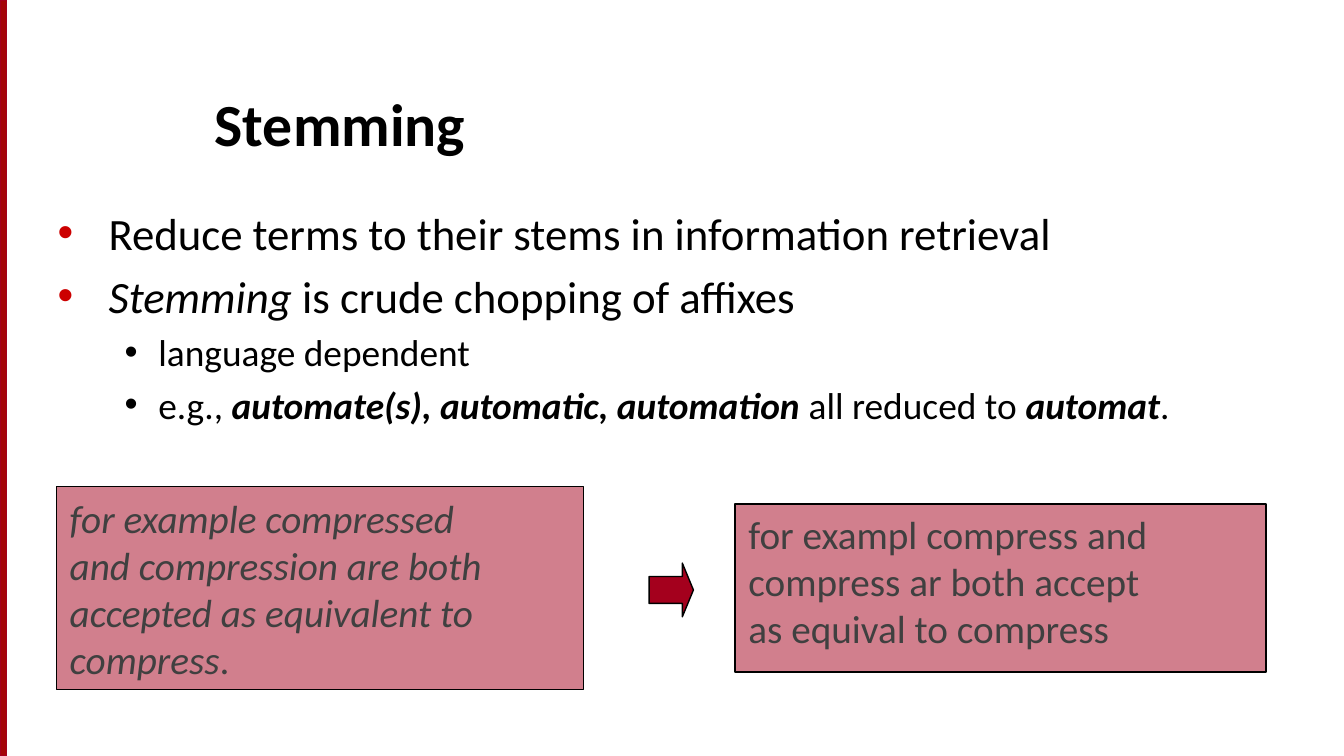
import pptx
import pptx.util
import pptx.dml.color
import pptx.enum.shapes
import pptx.enum.text
import pptx.oxml.ns
import lxml.etree

Inches = pptx.util.Inches
Pt = pptx.util.Pt
RGBColor = pptx.dml.color.RGBColor
SHAPE = pptx.enum.shapes.MSO_SHAPE
ANCHOR = pptx.enum.text.MSO_ANCHOR
qn = pptx.oxml.ns.qn

BLACK = RGBColor(0x00, 0x00, 0x00)
GREY = RGBColor(0x40, 0x40, 0x40)
CRIMSON = RGBColor(0xA4, 0x00, 0x1D)
STRIPE_RED = RGBColor(0xA4, 0x05, 0x08)
BULLET_RED = RGBColor(0xCC, 0x00, 0x00)


def add_run(p, text, size, color, bold=False, italic=False):
    r = p.add_run()
    r.text = text
    r.font.name = "Calibri"
    r.font.size = Pt(size)
    r.font.color.rgb = color
    r.font.bold = bold
    r.font.italic = italic


def add_block(kind, left, top, width, height, fill, line):
    sp = s.shapes.add_shape(kind, Inches(left), Inches(top), Inches(width), Inches(height))
    sp.shadow.inherit = False
    sp.fill.solid()
    sp.fill.fore_color.rgb = fill
    sp.line.color.rgb = line
    sp.line.width = Pt(0.75)
    return sp


prs = pptx.Presentation()
prs.slide_width = Inches(10)
prs.slide_height = Inches(10) * 9 // 16
s = prs.slides.add_slide(prs.slide_layouts[6])

stripe = add_block(SHAPE.RECTANGLE, 0, 0, 0.05, 5.62, STRIPE_RED, CRIMSON)
stripe.height = prs.slide_height

title = s.shapes.add_textbox(Inches(1.5), Inches(0.42), Inches(8.17), Inches(0.81))
tf = title.text_frame
tf.word_wrap = True
tf.vertical_anchor = ANCHOR.BOTTOM
add_run(tf.paragraphs[0], "Stemming", 32, BLACK, bold=True)

bullets = [
    (0, [("Reduce terms to their stems in information retrieval", False, False)]),
    (0, [("Stemming", False, True), (" is crude chopping of affixes", False, False)]),
    (1, [("language dependent", False, False)]),
    (1, [
        ("e.g., ", False, False),
        ("automate(s), automatic, automation", True, True),
        (" all reduced to ", False, False),
        ("automat", True, True),
        (".", False, False),
    ]),
]
levels = [(24, 0.38, 0.38, BULLET_RED), (20, 0.75, 0.25, BLACK)]

body = s.shapes.add_textbox(Inches(0.33), Inches(1.48), Inches(9.33), Inches(3.65))
tf = body.text_frame
tf.word_wrap = True
for i, (level, runs) in enumerate(bullets):
    size, margin, hanging, bullet_color = levels[level]
    p = tf.add_paragraph() if i else tf.paragraphs[0]
    p.level = level
    p.space_before = Pt(size * 0.2 if i else 0)
    pPr = p._p.get_or_add_pPr()
    pPr.set("marL", str(Inches(margin)))
    pPr.set("indent", str(-Inches(hanging)))
    buClr = lxml.etree.SubElement(pPr, qn("a:buClr"))
    lxml.etree.SubElement(buClr, qn("a:srgbClr"), val=str(bullet_color))
    lxml.etree.SubElement(pPr, qn("a:buFont"), typeface="Arial")
    lxml.etree.SubElement(pPr, qn("a:buChar"), char="•")
    for text, bold, italic in runs:
        add_run(p, text, size, BLACK, bold, italic)

examples = [
    (0.42, 3.62, 3.92, 1.51, ANCHOR.MIDDLE, True, [
        [("for example compressed", True)],
        [("and compression are both", True)],
        [("accepted as equivalent to", True)],
        [("compress", True), (".", False)],
    ]),
    (5.47, 3.75, 3.95, 1.25, ANCHOR.TOP, False, [
        [("for exampl compress and", False)],
        [("compress ar both accept", False)],
        [("as equival to compress", False)],
    ]),
]
for left, top, width, height, anchor, wrap, lines in examples:
    sp = add_block(SHAPE.RECTANGLE, left, top, width, height, CRIMSON, BLACK)
    color = sp._element.spPr.find(qn("a:solidFill")).find(qn("a:srgbClr"))
    lxml.etree.SubElement(color, qn("a:alpha"), val="50000")
    tf = sp.text_frame
    tf.word_wrap = wrap
    tf.vertical_anchor = anchor
    for i, runs in enumerate(lines):
        p = tf.add_paragraph() if i else tf.paragraphs[0]
        p.alignment = pptx.enum.text.PP_ALIGN.LEFT
        for text, italic in runs:
            add_run(p, text, 21, GREY, italic=italic)

arrow = add_block(SHAPE.RIGHT_ARROW, 4.83, 4.19, 0.33, 0.4, CRIMSON, BLACK)
arrow.adjustments[0] = 0.5
arrow.adjustments[1] = 0.25

prs.save("out.pptx")
